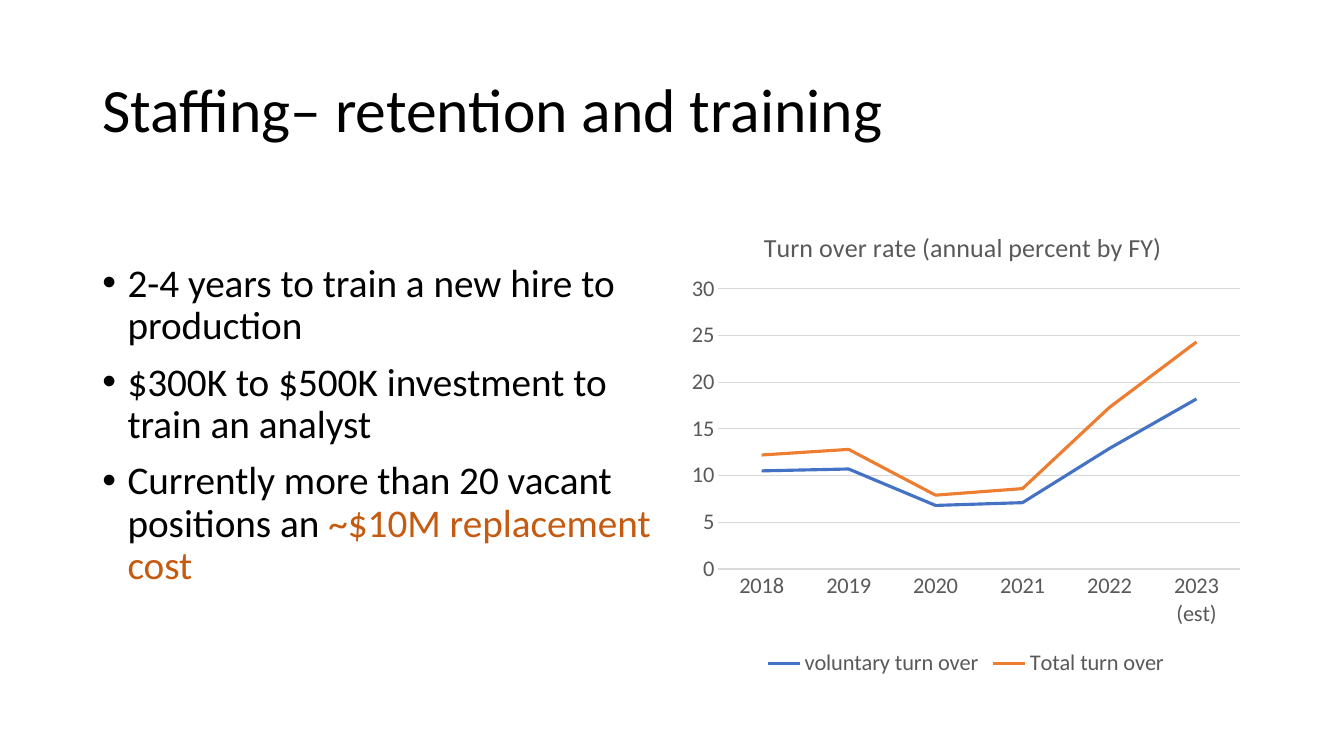
"""Build the staffing retention and training slide."""
from dataclasses import dataclass

from lxml.etree import SubElement
from pptx import Presentation
from pptx.chart.data import CategoryChartData
from pptx.dml.color import RGBColor
from pptx.enum.chart import XL_CHART_TYPE as ChartType
from pptx.enum.chart import XL_LEGEND_POSITION as LegendPos
from pptx.enum.chart import XL_TICK_MARK as Tick
from pptx.enum.text import MSO_ANCHOR as Anchor
from pptx.oxml.ns import qn
from pptx.util import Emu, Pt


@dataclass(frozen=True)
class Theme:
    font: str = "Calibri"
    text: str = "000000"
    accent: str = "C55A11"
    label: str = "595959"
    grid: str = "D9D9D9"
    title_size: float = 44
    body_size: float = 28
    chart_title_size: float = 18.6
    label_size: float = 16
    grid_width: float = 0.75
    series_width: float = 2.25


@dataclass(frozen=True)
class Box:
    x: int
    y: int
    w: int
    h: int


@dataclass(frozen=True)
class Span:
    text: str
    color: str


@dataclass(frozen=True)
class Series:
    name: str
    values: tuple[float, ...]
    color: str


THEME = Theme()
SLIDE = Box(0, 0, 1280, 720)
TITLE = Box(88, 38, 1104, 139)
BODY = Box(88, 192, 544, 457)
CHART = Box(648, 192, 544, 457)
PLOT = Box(36, 83, 497, 267)
CHART_TITLE = Box(75, 22, 0, 0)
BODY_INSET = 59
BULLET_INDENT = 24

BULLETS = (
    (Span("2-4 years to train a new hire to production", THEME.text),),
    (Span("$300K to $500K investment to train an analyst", THEME.text),),
    (Span("Currently more than 20 vacant positions an ", THEME.text),
     Span("~$10M replacement cost", THEME.accent)),
)
YEARS = ("2018", "2019", "2020", "2021", "2022", "2023 (est)")
SERIES = (
    Series("voluntary turn over", (10.5, 10.7, 6.8, 7.1, 12.9, 18.2), "4472C4"),
    Series("Total turn over", (12.2, 12.8, 7.9, 8.6, 17.3, 24.3), "ED7D31"),
)


def px(n: int) -> Emu:
    """Convert pixels to EMU."""
    return Emu(n * 9525)


def place(box: Box) -> tuple[Emu, Emu, Emu, Emu]:
    """Return a box as EMU lengths."""
    return px(box.x), px(box.y), px(box.w), px(box.h)


def style_font(font, size: float, color: str) -> None:
    """Set the typeface, size and colour of a font."""
    font.name = THEME.font
    font.size = Pt(size)
    font.bold = False
    font.color.rgb = RGBColor.from_string(color)


def style_line(line, width: float, color: str) -> None:
    """Set the width and colour of a line."""
    line.width = Pt(width)
    line.color.rgb = RGBColor.from_string(color)


def add_text_frame(slide, box: Box):
    """Add a wrapping text box and return its text frame."""
    tf = slide.shapes.add_textbox(*place(box)).text_frame
    tf.word_wrap = True
    return tf


def add_spans(p, spans: tuple[Span, ...], size: float) -> None:
    """Fill a paragraph run by run."""
    p.line_spacing = 0.9
    for span in spans:
        r = p.add_run()
        r.text = span.text
        style_font(r.font, size, span.color)


def add_bullets(slide) -> None:
    """Add the bulleted list."""
    tf = add_text_frame(slide, BODY)
    tf.margin_top = px(BODY_INSET)
    for i, spans in enumerate(BULLETS):
        p = tf.add_paragraph() if i else tf.paragraphs[0]
        add_spans(p, spans, THEME.body_size)
        p.space_before = Pt(10 if i else 0)
        props = p._p.get_or_add_pPr()
        props.set("marL", str(px(BULLET_INDENT)))
        props.set("indent", str(-px(BULLET_INDENT)))
        SubElement(props, qn("a:buFont"), typeface="Arial")
        SubElement(props, qn("a:buChar"), char="•")


def set_layout(parent, index: int, box: Box, inner: bool) -> None:
    """Position a chart part as fractions of the chart area."""
    layout = parent.find(qn("c:layout"))
    if layout is None:
        layout = SubElement(parent, qn("c:layout"))
        parent.insert(index, layout)
    manual = SubElement(layout, qn("c:manualLayout"))
    items = [("xMode", "edge"), ("yMode", "edge"),
             ("x", box.x / CHART.w), ("y", box.y / CHART.h)]
    if inner:
        items = [("layoutTarget", "inner"), *items,
                 ("w", box.w / CHART.w), ("h", box.h / CHART.h)]
    for tag, value in items:
        SubElement(manual, qn(f"c:{tag}"), val=str(value))


def add_turnover_chart(slide) -> None:
    """Add the turnover line chart."""
    data = CategoryChartData()
    data.categories = YEARS
    for series in SERIES:
        data.add_series(series.name, series.values)
    chart = slide.shapes.add_chart(ChartType.LINE, *place(CHART), data).chart
    style_font(chart.font, THEME.label_size, THEME.label)

    p = chart.chart_title.text_frame.paragraphs[0]
    r = p.add_run()
    r.text = "Turn over rate (annual percent by FY)"
    style_font(r.font, THEME.chart_title_size, THEME.label)
    chart.chart_title.include_in_layout = False
    set_layout(chart.chart_title._element, 1, CHART_TITLE, False)
    set_layout(chart._chartSpace.chart.plotArea, 0, PLOT, True)

    chart.has_legend = True
    chart.legend.position = LegendPos.BOTTOM
    chart.legend.include_in_layout = False
    style_font(chart.legend.font, THEME.label_size, THEME.label)

    for axis in (chart.category_axis, chart.value_axis):
        axis.major_tick_mark = axis.minor_tick_mark = Tick.NONE
        style_font(axis.tick_labels.font, THEME.label_size, THEME.label)
    style_line(chart.category_axis.format.line, THEME.grid_width, THEME.grid)
    values = chart.value_axis
    values.minimum_scale, values.maximum_scale, values.major_unit = 0, 30, 5
    values.format.line.fill.background()
    style_line(values.major_gridlines.format.line, THEME.grid_width, THEME.grid)

    chart.plots[0].vary_by_categories = False
    for line, series in zip(chart.plots[0].series, SERIES):
        line.smooth = False
        style_line(line.format.line, THEME.series_width, series.color)


def main() -> None:
    """Assemble and save the slide."""
    prs = Presentation()
    prs.slide_width, prs.slide_height = px(SLIDE.w), px(SLIDE.h)
    s = prs.slides.add_slide(prs.slide_layouts[6])
    tf = add_text_frame(s, TITLE)
    tf.vertical_anchor = Anchor.MIDDLE
    heading = Span("Staffing– retention and training", THEME.text)
    add_spans(tf.paragraphs[0], (heading,), THEME.title_size)
    add_bullets(s)
    add_turnover_chart(s)
    prs.save("out.pptx")


if __name__ == "__main__":
    main()
